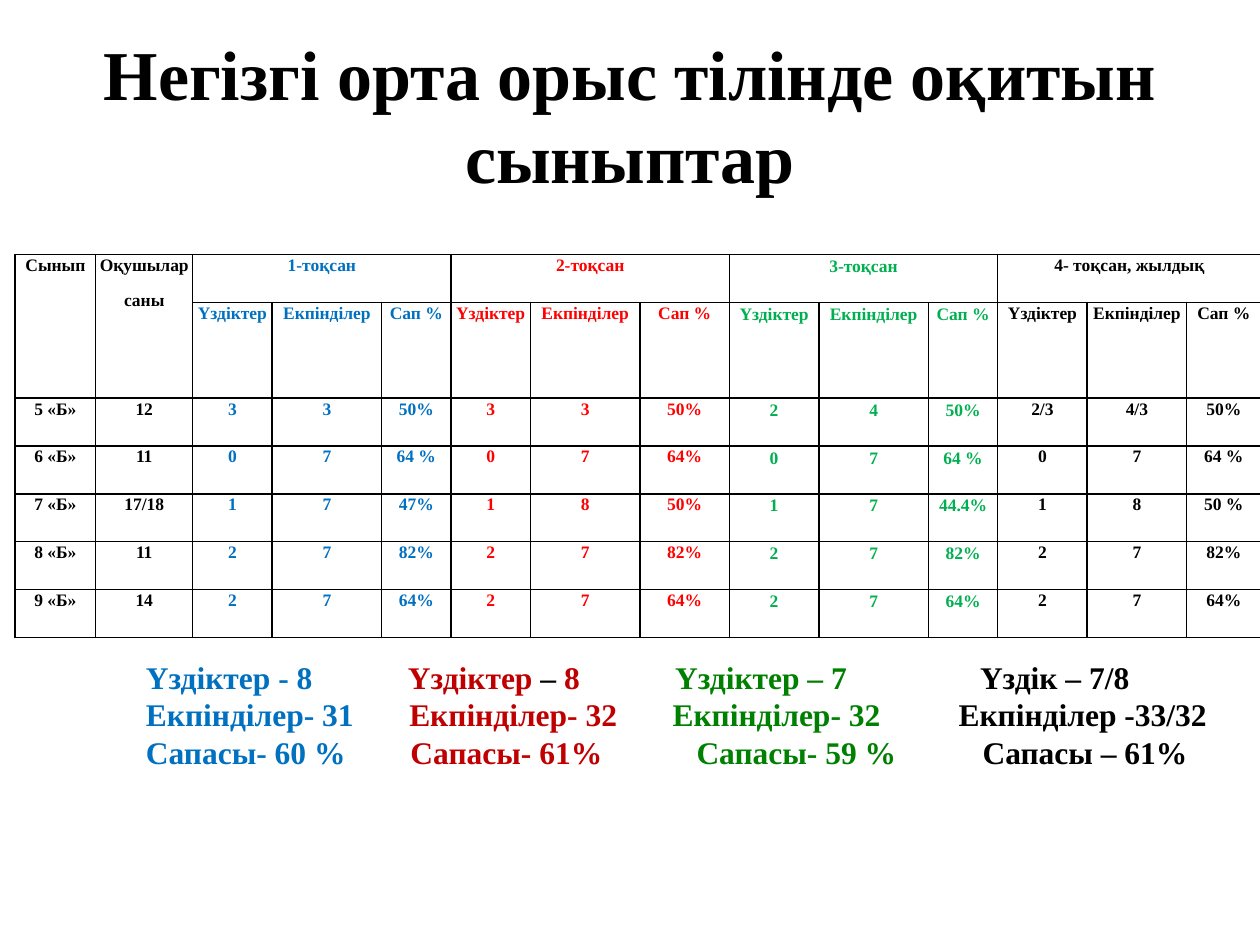
from lxml import etree
from pptx import Presentation
from pptx.dml.color import RGBColor
from pptx.enum.text import MSO_ANCHOR, PP_ALIGN
from pptx.oxml.ns import qn
from pptx.util import Inches, Pt

CENTER = PP_ALIGN.CENTER
MIDDLE = MSO_ANCHOR.MIDDLE
TOP = MSO_ANCHOR.TOP
FONT = "Times New Roman"
BLACK, BLUE, RED, GREEN = "000000", "0070C0", "FF0000", "00B050"
DARK_RED, DARK_GREEN = "C00000", "008000"

TITLE = "Негізгі орта орыс тілінде оқитын сыныптар"
QUARTERS = [
    ("1-тоқсан", BLUE, (0.02, 0)),
    ("2-тоқсан", RED, (0.02, 0)),
    ("3-тоқсан", GREEN, (0.01, 0.01)),
    ("4- тоқсан, жылдық", BLACK, (0, 0)),
]
CLASS_HEADS = ["Сынып", "Оқушылар\nсаны"]
MEASURES = ["Үздіктер", "Екпінділер", "Сап %"]
CLASSES = [
    ["5 «Б»", "12", "3", "3", "50%", "3", "3", "50%", "2", "4", "50%", "2/3", "4/3", "50%"],
    ["6 «Б»", "11", "0", "7", "64 %", "0", "7", "64%", "0", "7", "64 %", "0", "7", "64 %"],
    ["7 «Б»", "17/18", "1", "7", "47%", "1", "8", "50%", "1", "7", "44.4%", "1", "8", "50 %"],
    ["8 «Б»", "11", "2", "7", "82%", "2", "7", "82%", "2", "7", "82%", "2", "7", "82%"],
    ["9 «Б»", "14", "2", "7", "64%", "2", "7", "64%", "2", "7", "64%", "2", "7", "64%"],
]
COLUMN_WIDTHS = [0.64, 0.77, 0.63, 0.87, 0.55, 0.63, 0.87, 0.71,
                 0.71, 0.87, 0.55, 0.71, 0.79, 0.59]
ROW_HEIGHTS = [0.38, 0.76] + [0.38] * len(CLASSES)
SUMMARY = [
    ((2.08, 4.2, 6.62),
     [("Үздіктер - 8", BLUE), ("\tҮздіктер", DARK_RED), (" – ", BLACK), ("8", DARK_RED),
      ("\tҮздіктер – 7", DARK_GREEN), ("\tҮздік – 7/8", BLACK)]),
    ((2.09, 4.18, 6.45),
     [("Екпінділер- 31", BLUE), ("\tЕкпінділер- 32", DARK_RED),
      ("\tЕкпінділер- 32", DARK_GREEN), ("\tЕкпінділер -33/32", BLACK)]),
    ((2.1, 4.37, 6.64),
     [("Сапасы- 60 %", BLUE), ("\tСапасы- 61%", DARK_RED),
      ("\tСапасы- 59 %", DARK_GREEN), ("\tСапасы – 61%", BLACK)]),
]


def style(font, size, color):
    font.name = FONT
    font.size = Pt(size)
    font.bold = True
    font.color.rgb = RGBColor.from_string(color)


def add_borders(cell):
    properties = cell._tc.get_or_add_tcPr()
    for position, side in enumerate(("lnL", "lnR", "lnT", "lnB")):
        border = etree.Element(qn(f"a:{side}"), w=str(Pt(1)))
        fill = etree.SubElement(border, qn("a:solidFill"))
        etree.SubElement(fill, qn("a:srgbClr"), val=BLACK)
        properties.insert(position, border)


def fill_cell(cell, text, color, side_margin, top_margin):
    cell.fill.background()
    add_borders(cell)
    cell.margin_left = cell.margin_right = Inches(side_margin)
    cell.margin_top = Inches(top_margin)
    cell.margin_bottom = 0
    cell.vertical_anchor = TOP
    if not text:
        return
    cell.text_frame.text = text
    for paragraph in cell.text_frame.paragraphs:
        paragraph.alignment = CENTER
        paragraph.line_spacing = 1.07
        paragraph.space_after = Pt(8)
        for run in paragraph.runs:
            style(run.font, 10, color)


def add_title(slide):
    title = slide.shapes.title
    title.left, title.top, title.width, title.height = map(Inches, (0.55, 0.18, 8.9, 1.45))
    title.text_frame.text = TITLE
    title.text_frame.vertical_anchor = MIDDLE
    heading = title.text_frame.paragraphs[0]
    heading.alignment = CENTER
    style(heading.runs[0].font, 40, BLACK)


def add_results(slide):
    quarter_heads = [text for name, _, _ in QUARTERS for text in (name, "", "")]
    rows = [CLASS_HEADS + quarter_heads, ["", ""] + MEASURES * len(QUARTERS)] + CLASSES
    results = slide.shapes.add_table(
        len(rows), len(COLUMN_WIDTHS), Inches(0.12), Inches(2.02),
        Inches(sum(COLUMN_WIDTHS)), Inches(sum(ROW_HEIGHTS))).table
    results.first_row = results.horz_banding = False
    for column, width in zip(results.columns, COLUMN_WIDTHS):
        column.width = Inches(width)
    for row, height in zip(results.rows, ROW_HEIGHTS):
        row.height = Inches(height)

    leading = len(CLASS_HEADS)
    span = len(MEASURES)
    for column in range(leading):
        results.cell(0, column).merge(results.cell(1, column))
    for quarter in range(len(QUARTERS)):
        first = leading + quarter * span
        results.cell(0, first).merge(results.cell(0, first + span - 1))

    for r, values in enumerate(rows):
        for c, value in enumerate(values):
            if c < leading:
                color, margins = BLACK, (0.02, 0)
            else:
                _, color, margins = QUARTERS[(c - leading) // span]
            fill_cell(results.cell(r, c), value, color, *margins)


def add_summary(slide):
    summary = slide.shapes.add_textbox(*map(Inches, (1.06, 5.17, 8.66, 1.31))).text_frame
    summary.word_wrap = True
    for index, (tab_stops, parts) in enumerate(SUMMARY):
        line = summary.add_paragraph() if index else summary.paragraphs[0]
        tabs = etree.SubElement(line._p.get_or_add_pPr(), qn("a:tabLst"))
        for stop in tab_stops:
            etree.SubElement(tabs, qn("a:tab"), pos=str(Inches(stop)), algn="l")
        for text, color in parts:
            run = line.add_run()
            run.text = text
            style(run.font, 18, color)


def main():
    presentation = Presentation()
    presentation.slide_width = Inches(10)
    presentation.slide_height = Inches(7.5)
    slide = presentation.slides.add_slide(presentation.slide_layouts[5])
    add_title(slide)
    add_summary(slide)
    add_results(slide)
    presentation.save("out.pptx")


if __name__ == "__main__":
    main()
